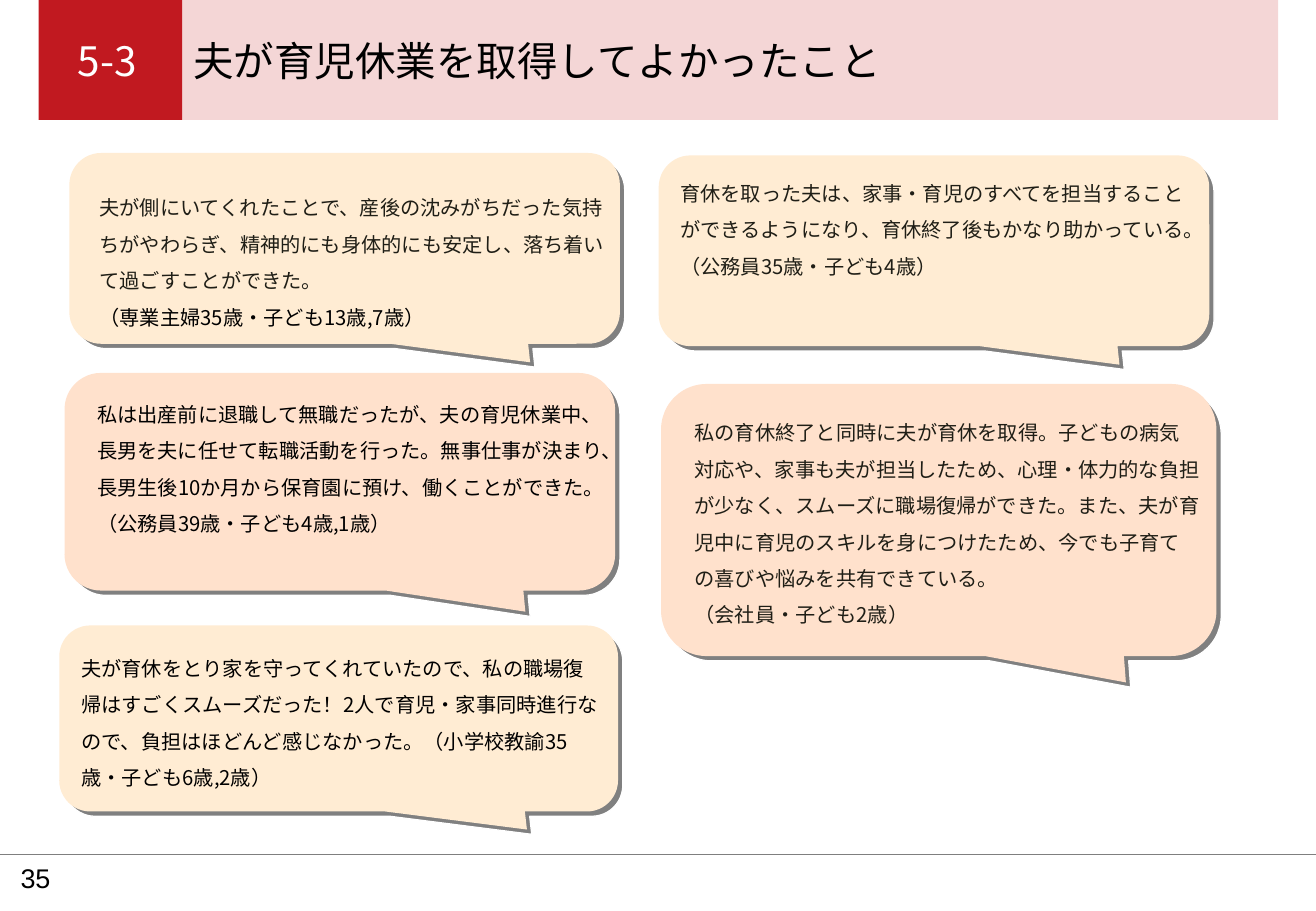
import dataclasses

import lxml.etree
import pptx
import pptx.dml.color
import pptx.enum.shapes
import pptx.enum.text
import pptx.oxml
import pptx.oxml.ns
import pptx.util

Cm = pptx.util.Cm
Pt = pptx.util.Pt
ShapeType = pptx.enum.shapes.MSO_SHAPE
Anchor = pptx.enum.text.MSO_ANCHOR
qn = pptx.oxml.ns.qn


@dataclasses.dataclass(frozen=True)
class Theme:
    font: str = "Noto Sans CJK JP"
    number_font: str = "Arial"
    title_size: int = 24
    body_size: int = 12
    number_size: int = 16
    line_spacing: float = 1.5
    red: str = "C11920"
    band: str = "C00000"
    band_alpha: int = 16
    cream: str = "FFECD3"
    peach: str = "FFE1CC"
    shade: str = "808080"
    rule: str = "7F7F7F"
    ink: str = "1F1E16"
    black: str = "000000"
    white: str = "FFFFFF"


class SlideBuilder:
    callout_adjustments = (0.337, 0.597, 0.167)
    shade_offset = 0.1

    def __init__(self, presentation, theme):
        self.theme = theme
        self.slide = presentation.slides.add_slide(presentation.slide_layouts[5])
        self.shapes = self.slide.shapes

    def color(self, value):
        return pptx.dml.color.RGBColor.from_string(value)

    def apply(self, target, values):
        for name, value in values.items():
            setattr(target, name, value)

    def shape(self, parent, kind, box, fill, alpha=None, outline=None):
        shape = parent.add_shape(kind, *map(Cm, box))
        shape.shadow.inherit = False
        shape.fill.solid()
        shape.fill.fore_color.rgb = self.color(fill)
        if alpha is not None:
            color = shape.fill._xPr.find(".//" + qn("a:srgbClr"))
            lxml.etree.SubElement(color, qn("a:alpha"), val=str(alpha * 1000))
        if outline:
            shape.line.color.rgb = self.color(outline)
            shape.line.width = Pt(0.75)
        else:
            shape.line.fill.background()
        return shape

    def line(self, start, end, color):
        connector = self.shapes.add_connector(
            pptx.enum.shapes.MSO_CONNECTOR.STRAIGHT, *map(Cm, start + end))
        connector.line.color.rgb = self.color(color)
        connector.line.width = Pt(0.25)
        lxml.etree.SubElement(connector._element.spPr, qn("a:effectLst"))

    def run(self, paragraph, text, size, color, font):
        run = paragraph.add_run()
        run.text = text
        self.apply(run.font, {"size": Pt(size), "name": font, "bold": False})
        run.font.color.rgb = self.color(color)
        lxml.etree.SubElement(run._r.rPr, qn("a:ea"), typeface=font)

    def frame(self, shape, margins, anchor=Anchor.TOP):
        left, top, right, bottom = map(Cm, margins)
        self.apply(shape.text_frame, {
            "word_wrap": True,
            "auto_size": pptx.enum.text.MSO_AUTO_SIZE.NONE,
            "vertical_anchor": anchor,
            "margin_left": left, "margin_top": top,
            "margin_right": right, "margin_bottom": bottom,
        })
        return shape.text_frame

    def title(self, box, number, text, tab):
        title = self.shapes.title
        names = ("left", "top", "width", "height")
        self.apply(title, dict(zip(names, map(Cm, box))))
        paragraph = self.frame(title, (0, 0, 0, 0.15)).paragraphs[0]
        properties = paragraph._p.get_or_add_pPr()
        tabs = lxml.etree.SubElement(properties, qn("a:tabLst"))
        lxml.etree.SubElement(tabs, qn("a:tab"), pos=str(Cm(tab)), algn="l")
        paragraph.alignment = pptx.enum.text.PP_ALIGN.LEFT
        theme = self.theme
        self.run(paragraph, number + "\t", theme.title_size, theme.white, theme.font)
        self.run(paragraph, text, theme.title_size, theme.black, theme.font)
        self.shapes._spTree.append(title._element)

    def page_number(self, box, text):
        theme = self.theme
        frame = self.frame(self.shapes.add_textbox(*map(Cm, box)),
                           (0, 0.13, 0, 0.13), Anchor.MIDDLE)
        self.run(frame.paragraphs[0], text, theme.number_size, theme.black,
                 theme.number_font)

    def bubble(self, box, fill, text_box, paragraphs):
        left, top, width, height = box
        offset = self.shade_offset
        group = self.shapes.add_group_shape()
        layers = (
            ((left + offset, top + offset, width, height), self.theme.shade, self.theme.white),
            (box, fill, None),
        )
        for layer_box, layer_fill, outline in layers:
            callout = self.shape(group.shapes, ShapeType.ROUNDED_RECTANGULAR_CALLOUT,
                                 layer_box, layer_fill, outline=outline)
            for index, value in enumerate(self.callout_adjustments):
                callout.adjustments[index] = value
        frame = self.frame(self.shapes.add_textbox(*map(Cm, text_box)),
                           (0.25, 0.13, 0.25, 0.13))
        for index, (text, color) in enumerate(paragraphs):
            paragraph = frame.add_paragraph() if index else frame.paragraphs[0]
            paragraph.line_spacing = self.theme.line_spacing
            self.run(paragraph, text, self.theme.body_size, color, self.theme.font)


def main():
    theme = Theme()
    presentation = pptx.Presentation()
    presentation.slide_width = Cm(27.51)
    presentation.slide_height = Cm(19.05)
    builder = SlideBuilder(presentation, theme)

    builder.line((0, 17.86), (27.51, 17.86), theme.rule)
    builder.shape(builder.shapes, ShapeType.RECTANGLE, (0.81, 0, 3, 2.51), theme.red)
    builder.shape(builder.shapes, ShapeType.RECTANGLE, (3.81, 0, 22.91, 2.51),
                  theme.band, alpha=theme.band_alpha)
    builder.page_number((0.43, 17.86, 1.02, 0.99), "35")
    builder.title((1.63, 0.76, 24.77, 1.63), "5-3",
                  "夫が育児休業を取得してよかったこと", 2.41)

    bubbles = (
        ((1.45, 3.2, 11.51, 3.99), theme.cream, (1.83, 3.71, 11.3, 3.23), (
            ("夫が側にいてくれたことで、産後の沈みがちだった気持ちがやわらぎ、"
             "精神的にも身体的にも安定し、落ち着いて過ごすことができた。", theme.ink),
            ("（専業主婦35歳・子ども13歳,7歳）", theme.black))),
        ((13.77, 3.25, 11.51, 3.99), theme.cream, (13.97, 3.4, 11.07, 3.63), (
            ("育休を取った夫は、家事・育児のすべてを担当することができるようになり、"
             "育休終了後もかなり助かっている。", theme.ink),
            ("（公務員35歳・子ども4歳）", theme.ink))),
        ((1.35, 7.8, 11.51, 4.55), theme.peach, (1.78, 8.03, 11.13, 4.01), (
            ("私は出産前に退職して無職だったが、夫の育児休業中、長男を夫に任せて"
             "転職活動を行った。無事仕事が決まり、長男生後10か月から保育園に預け、"
             "働くことができた。", theme.black),
            ("（公務員39歳・子ども4歳,1歳）", theme.black))),
        ((13.82, 8.03, 11.61, 5.69), theme.peach, (14.27, 8.41, 11.07, 5.51), (
            ("私の育休終了と同時に夫が育休を取得。子どもの病気対応や、家事も夫が"
             "担当したため、心理・体力的な負担が少なく、スムーズに職場復帰ができた。"
             "また、夫が育児中に育児のスキルを身につけたため、今でも子育ての喜びや"
             "悩みを共有できている。", theme.ink),
            ("（会社員・子ども2歳）", theme.ink))),
        ((1.24, 13.08, 11.68, 3.89), theme.cream, (1.45, 13.34, 11.4, 4.01), (
            ("夫が育休をとり家を守ってくれていたので、私の職場復帰はすごくスムーズ"
             "だった！2人で育児・家事同時進行なので、負担はほどんど感じなかった。"
             "（小学校教諭35歳・子ども6歳,2歳）", theme.black),)),
    )
    for bubble in bubbles:
        builder.bubble(*bubble)

    presentation.save("out.pptx")


if __name__ == "__main__":
    main()
